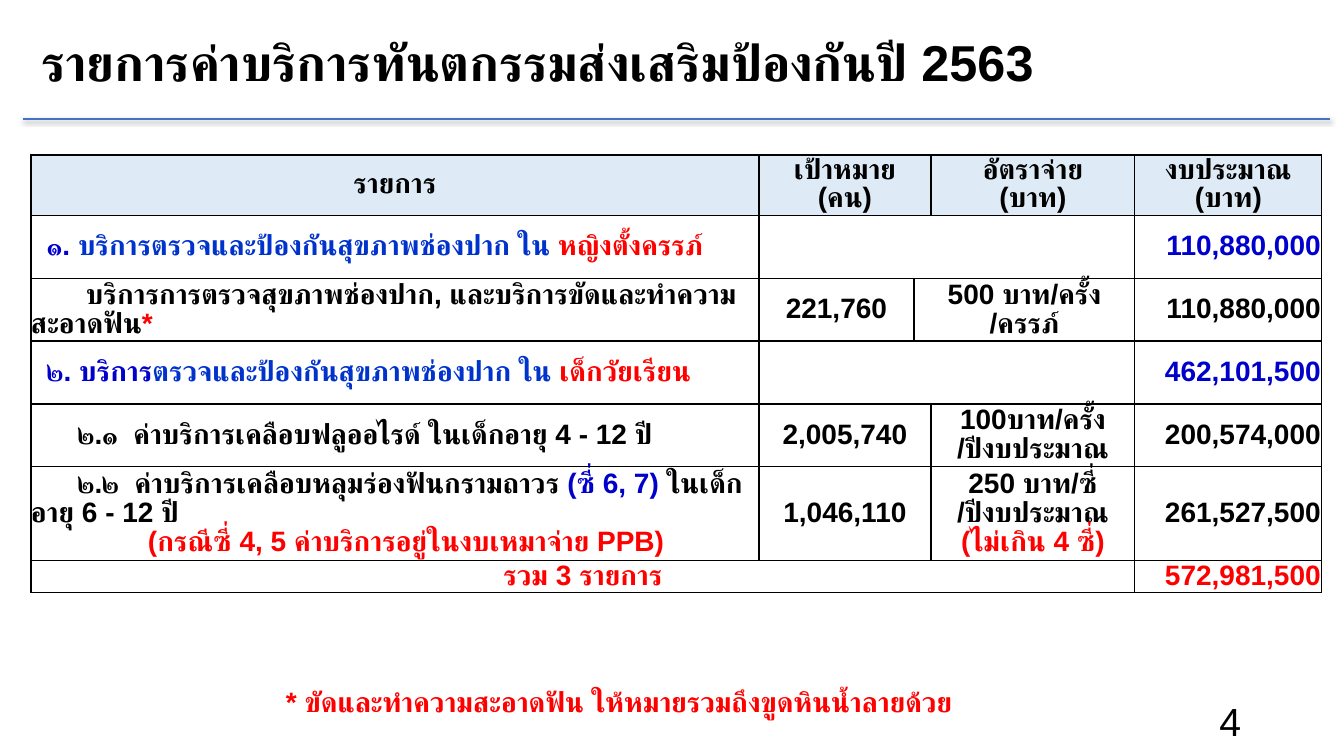
"""Build the slide on the dental promotion and prevention budget for 2563."""
import lxml.etree
import pptx
import pptx.dml.color
import pptx.enum.shapes
import pptx.enum.text
import pptx.oxml.ns
import pptx.util

PX = 914400 / 100.8
FONT = "Arial"
HUES = {"black": "000000", "red": "FF0000", "navy": "0000CC",
        "blue": "0033CC", "rule": "4472C4", "head": "DEEBF7"}
ALIGN = pptx.enum.text.PP_ALIGN
MID = pptx.enum.text.MSO_ANCHOR.MIDDLE
COLS = [728, 155, 17, 204, 187]
ROWS = [60, 63, 62, 63, 62, 94, 32]


def px(num):
    return pptx.util.Emu(round(num * PX))


def hue(name):
    return pptx.dml.color.RGBColor.from_string(HUES[name])


def node(root, tag, **attrs):
    return lxml.etree.SubElement(root, pptx.oxml.ns.qn(tag), attrs)


def para(*runs, dent=0, left=0):
    return {"runs": runs, "dent": dent, "left": left}


def plain(*lines, tint="black"):
    return [para((line, tint)) for line in lines]


def write(frame, paras, size=20, align=ALIGN.LEFT, bold=True, pitch=1.0):
    frame.word_wrap = True
    for num, item in enumerate(paras):
        par = frame.add_paragraph() if num else frame.paragraphs[0]
        par.alignment = align
        par.line_spacing = pitch
        props = par._p.get_or_add_pPr()
        props.set("marL", str(px(item["left"])))
        props.set("indent", str(px(item["dent"])))
        for text, tint in item["runs"]:
            run = par.add_run()
            run.text = text
            run.font.size = pptx.util.Pt(size)
            run.font.bold = bold
            run.font.color.rgb = hue(tint)
            run.font.name = FONT
            node(run._r.get_or_add_rPr(), "a:cs", typeface=FONT)


def add_title(slide, text):
    title = slide.shapes.title
    title.left, title.top, title.width, title.height = map(px, (31, 26, 1102, 72))
    write(title.text_frame, plain(text), 36)
    title.text_frame.vertical_anchor = pptx.enum.text.MSO_ANCHOR.TOP
    title.text_frame.auto_size = pptx.enum.text.MSO_AUTO_SIZE.NONE


def add_text(slide, box, paras, **style):
    shape = slide.shapes.add_textbox(*map(px, box))
    write(shape.text_frame, paras, **style)
    return shape


def add_rule(slide, left, right, top):
    kind = pptx.enum.shapes.MSO_CONNECTOR.STRAIGHT
    rule = slide.shapes.add_connector(kind, px(left), px(top), px(right), px(top))
    rule.line.color.rgb = hue("rule")
    rule.line.width = pptx.util.Pt(2)
    effect = node(rule._element.spPr, "a:effectLst")
    shade = node(effect, "a:outerShdw", blurRad=str(pptx.util.Pt(3)),
                 dist=str(pptx.util.Pt(1.6)), dir="5400000", rotWithShape="0")
    tint = node(shade, "a:srgbClr", val=HUES["black"])
    node(tint, "a:alpha", val="38000")


def frame_cell(cell, head, last):
    props = cell._tc.get_or_add_tcPr()
    for side in ("a:lnL", "a:lnR", "a:lnT", "a:lnB"):
        line = node(props, side, w=str(pptx.util.Pt(1)))
        node(node(line, "a:solidFill"), "a:srgbClr", val=HUES["black"])
    if head:
        cell.fill.solid()
        cell.fill.fore_color.rgb = hue("head")
    else:
        cell.fill.background()
    cell.margin_left = cell.margin_right = px(1 if last else 0)
    cell.margin_top = cell.margin_bottom = 0
    cell.vertical_anchor = MID


def add_grid(slide, rows):
    table = slide.shapes.add_table(len(ROWS), len(COLS), px(31), px(155),
                                   px(sum(COLS)), px(sum(ROWS))).table
    table.first_row = table.horz_banding = False
    for col, width in zip(table.columns, COLS):
        col.width = px(width)
    for row, high in zip(table.rows, ROWS):
        row.height = px(high)
    for num, cells in enumerate(rows):
        head = num == 0
        for col in range(len(COLS)):
            frame_cell(table.cell(num, col), head, col == len(COLS) - 1)
        col = 0
        for span, align, paras in cells:
            cell = table.cell(num, col)
            if span > 1:
                cell.merge(table.cell(num, col + span - 1))
            write(cell.text_frame, paras, align=align,
                  pitch=0.9 if head else 0.93)
            col += span


def mid(span, *lines, tint="black"):
    return span, ALIGN.CENTER, plain(*lines, tint=tint)


def item(*paras):
    return 1, ALIGN.LEFT, paras


def cost(text, tint="black"):
    return 1, ALIGN.RIGHT, plain(text, tint=tint)


def budget():
    return [
        [mid(1, "รายการ"), mid(2, "เป้าหมาย", "(คน)"),
         mid(1, "อัตราจ่าย", "(บาท)"), mid(1, "งบประมาณ", "(บาท)")],
        [item(para(("๑. ", "navy"),
                   ("บริการตรวจและป้องกันสุขภาพช่องปาก ใน ", "blue"),
                   ("หญิงตั้งครรภ์", "red"), dent=16)),
         mid(3), cost("110,880,000", "navy")],
        [item(para(("บริการการตรวจสุขภาพช่องปาก, และบริการขัดและทำความสะอาดฟัน", "black"),
                   ("*", "red"), dent=55)),
         mid(1, "221,760"), mid(2, "500 บาท/ครั้ง", "/ครรภ์"),
         cost("110,880,000")],
        [item(para(("๒. บริการ", "navy"),
                   ("ตรวจและป้องกันสุขภาพช่องปาก ใน ", "blue"),
                   ("เด็กวัยเรียน", "red"), dent=16)),
         mid(3), cost("462,101,500", "navy")],
        [item(para(("๒.๑  ค่าบริการเคลือบฟลูออไรด์ ในเด็กอายุ 4 - 12 ปี", "black"),
                   dent=47)),
         mid(2, "2,005,740"), mid(1, "100บาท/ครั้ง", "/ปีงบประมาณ"),
         cost("200,574,000")],
        [item(para(("๒.๒  ค่าบริการเคลือบหลุมร่องฟันกรามถาวร ", "black"),
                   ("(ซี่ 6, 7) ", "navy"),
                   ("ในเด็กอายุ 6 - 12 ปี", "black"), dent=47),
              para(("(กรณีซี่ 4, 5 ค่าบริการอยู่ในงบเหมาจ่าย PPB)", "red"),
                   dent=117)),
         mid(2, "1,046,110"),
         (1, ALIGN.CENTER, plain("250 บาท/ซี่", "/ปีงบประมาณ")
          + plain("(ไม่เกิน 4 ซี่)", tint="red")),
         cost("261,527,500")],
        [mid(4, "รวม 3 รายการ", tint="red"), cost("572,981,500", "red")],
    ]


def main():
    deck = pptx.Presentation()
    deck.slide_width, deck.slide_height = px(1344), px(756)
    slide = deck.slides.add_slide(deck.slide_layouts.get_by_name("Title Only"))
    add_rule(slide, 23, 1330, 119)
    page = add_text(slide, (949, 701, 302, 40), plain("4"),
                    size=28, align=ALIGN.RIGHT, bold=False)
    page.text_frame.vertical_anchor = MID
    add_grid(slide, budget())
    add_title(slide, "รายการค่าบริการทันตกรรมส่งเสริมป้องกันปี 2563")
    note = para(("* ขัดและทำความสะอาดฟัน ให้หมายรวมถึงขูดหินน้ำลายด้วย", "red"), left=25)
    add_text(slide, (251, 680, 797, 44), [note])
    deck.save("out.pptx")


if __name__ == "__main__":
    main()
